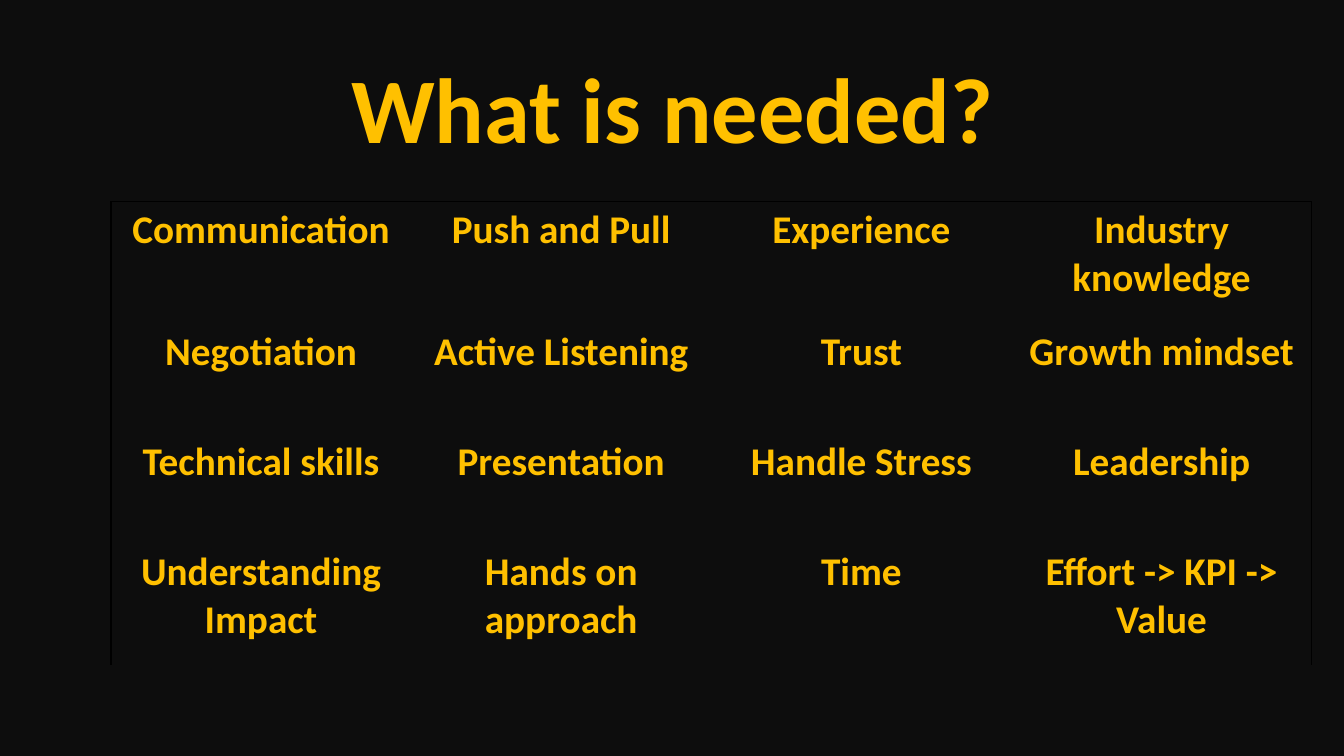
from lxml import etree
from pptx import Presentation
from pptx.dml.color import RGBColor
from pptx.enum.text import MSO_ANCHOR, PP_ALIGN
from pptx.oxml.ns import qn
from pptx.util import Inches, Pt

CENTER = PP_ALIGN.CENTER
MIDDLE = MSO_ANCHOR.MIDDLE
DARK, GOLD, BLACK = "0D0D0D", "FFC000", "000000"


def write(frame, text, size=28, color=GOLD, spacing=1.0):
    frame.word_wrap = True
    para = frame.paragraphs[0]
    para.alignment = CENTER
    para.line_spacing = spacing
    run = para.add_run()
    run.text = text
    font = run.font
    font.name = "Calibri"
    font.size = Pt(size)
    font.bold = True
    font.color.rgb = RGBColor.from_string(color)


def border(cell, side, color=None):
    props = cell._tc.get_or_add_tcPr()
    line = etree.SubElement(props, qn("a:ln" + side), w=str(Pt(1)))
    if color:
        fill = etree.SubElement(line, qn("a:solidFill"))
        etree.SubElement(fill, qn("a:srgbClr"), val=color)
    else:
        etree.SubElement(line, qn("a:noFill"))


deck = Presentation()
deck.slide_width = Inches(13.33)
deck.slide_height = Inches(7.5)
slide = deck.slides.add_slide(deck.slide_layouts[6])

# Background
back = slide.background.fill
back.solid()
back.fore_color.rgb = RGBColor.from_string(DARK)

# Title
title = slide.shapes.add_textbox(Inches(0.92), Inches(0.4), Inches(11.5), Inches(1.45))
title.text_frame.vertical_anchor = MIDDLE
write(title.text_frame, "What is needed?", size=66, spacing=0.9)

# Skills table
skills = [
    ["Communication", "Push and Pull", "Experience", "Industry knowledge"],
    ["Negotiation", "Active Listening", "Trust", "Growth mindset"],
    ["Technical skills", "Presentation", "Handle Stress", "Leadership"],
    ["Understanding Impact", "Hands on approach", "Time", "Effort -> KPI -> Value"],
]
heights = [1.21, 1.09, 1.09, 1.21]
last = len(skills[0]) - 1
table = slide.shapes.add_table(
    len(skills), last + 1, Inches(1.1), Inches(2), Inches(11.91), Inches(4.6)
).table
table.first_row = False
table.horz_banding = False

for row, (names, height) in enumerate(zip(skills, heights)):
    table.rows[row].height = Inches(height)
    for col, name in enumerate(names):
        cell = table.cell(row, col)
        write(cell.text_frame, name)
        # Lines on the left, right and top edges only
        border(cell, "L", BLACK if col == 0 else None)
        border(cell, "R", BLACK if col == last else None)
        border(cell, "T", BLACK if row == 0 else None)
        border(cell, "B")
        cell.fill.background()

deck.save("out.pptx")
